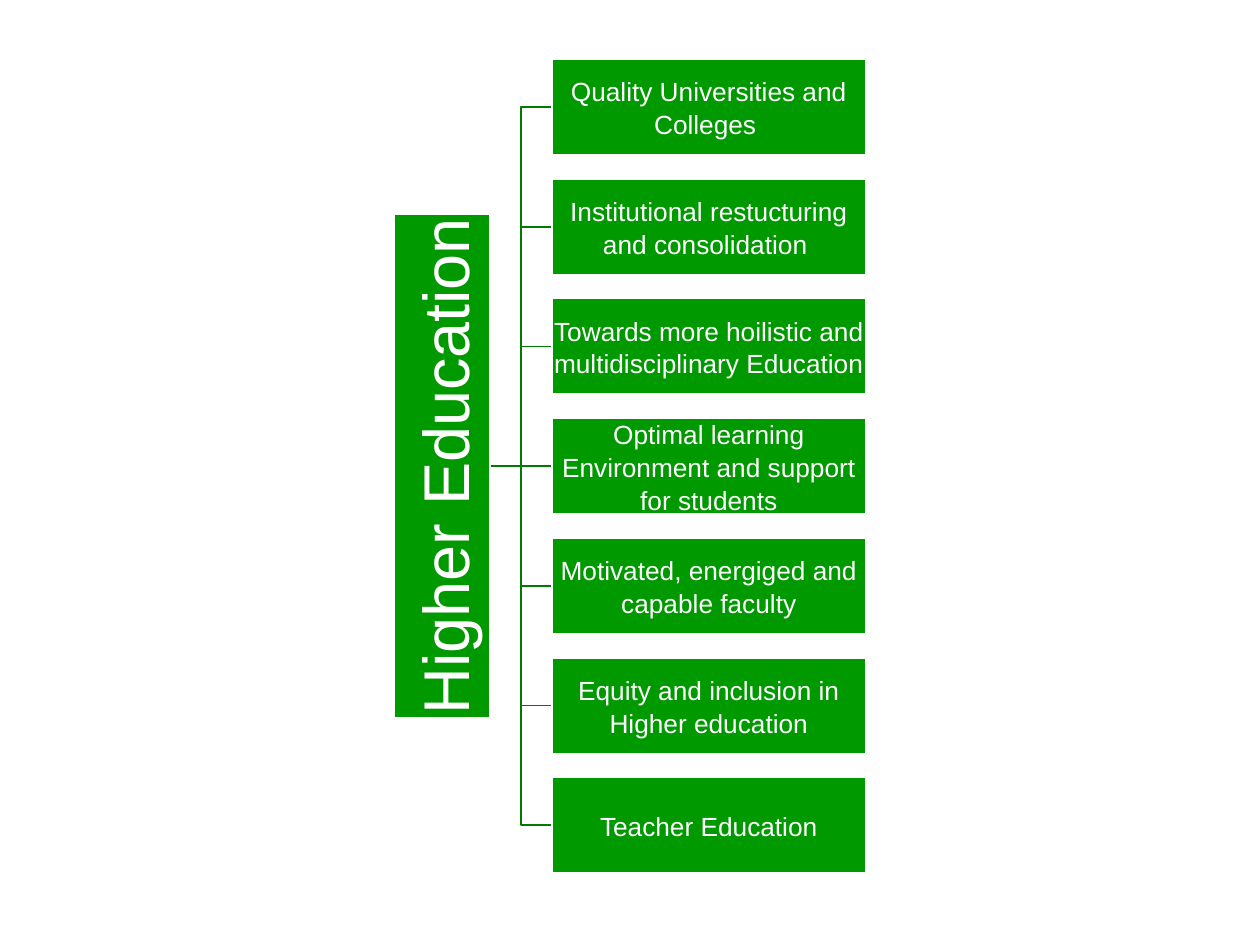
from dataclasses import dataclass

from lxml.etree import SubElement
from pptx import Presentation
from pptx.dml.color import RGBColor
from pptx.enum.shapes import MSO_CONNECTOR as Connector, MSO_SHAPE as Shape
from pptx.enum.text import MSO_ANCHOR as Anchor, PP_ALIGN as Align
from pptx.oxml.ns import qn
from pptx.util import Inches, Pt

ROOT = "Higher Education "
TOPICS = [
    "Quality Universities and Colleges ",
    "Institutional restucturing and consolidation ",
    "Towards more hoilistic and multidisciplinary Education",
    "Optimal learning Environment and support for students",
    "Motivated, energiged and capable faculty",
    "Equity and inclusion in Higher education",
    "Teacher Education",
]


@dataclass(frozen=True)
class Theme:
    fill: RGBColor = RGBColor(0x00, 0x99, 0x00)
    branch: RGBColor = RGBColor(0x00, 0x7B, 0x00)
    light: RGBColor = RGBColor(0xFF, 0xFF, 0xFF)
    font: str = "Arial"
    root_size: int = 37
    topic_size: int = 15
    line: int = 1


THEME = Theme()
WIDTH, HEIGHT = 10, 7.5
BAR = 0.76                       # thickness of every box
ROOT_LENGTH, TOPIC_WIDTH = 4, 2.49
ROOT_RIGHT, TOPIC_LEFT = 3.89, 4.38
TRUNK = (ROOT_RIGHT + TOPIC_LEFT) / 2
MIDDLE, PITCH = 3.7, 0.95
CENTRES = [MIDDLE + (row - len(TOPICS) // 2) * PITCH for row in range(len(TOPICS))]


def style_line(line, color):
    line.color.rgb = color
    line.width = Pt(THEME.line)


def add_box(page, text, center_x, center_y, width, *, size, inset, rotation=0):
    box = page.shapes.add_shape(
        Shape.RECTANGLE, Inches(center_x - width / 2), Inches(center_y - BAR / 2),
        Inches(width), Inches(BAR))
    box.rotation = rotation
    box.shadow.inherit = False
    box.fill.solid()
    box.fill.fore_color.rgb = THEME.fill
    style_line(box.line, THEME.light)
    frame = box.text_frame
    frame.word_wrap = True
    frame.vertical_anchor = Anchor.MIDDLE
    frame.margin_left = frame.margin_right = Inches(inset)
    frame.margin_top = frame.margin_bottom = Inches(inset)
    para = frame.paragraphs[0]
    para.alignment = Align.CENTER
    para.line_spacing = 1.04
    span = para.add_run()
    span.text = text
    span.font.name = THEME.font
    span.font.size = Pt(size)
    span.font.color.rgb = THEME.light
    return box


def add_bent_branch(page, center_y):
    points = [(TRUNK, MIDDLE), (TRUNK, center_y), (TOPIC_LEFT, center_y)]
    builder = page.shapes.build_freeform(Inches(ROOT_RIGHT), Inches(MIDDLE))
    builder.add_line_segments([(Inches(x), Inches(y)) for x, y in points], close=False)
    branch = builder.convert_to_shape()
    branch.shadow.inherit = False
    branch.fill.background()
    style_line(branch.line, THEME.branch)


def add_straight_branch(page):
    branch = page.shapes.add_connector(
        Connector.STRAIGHT, Inches(ROOT_RIGHT), Inches(MIDDLE),
        Inches(TOPIC_LEFT), Inches(MIDDLE))
    style_line(branch.line, THEME.branch)
    SubElement(branch._element.spPr, qn("a:effectLst"))
    return branch


def main():
    deck = Presentation()
    deck.slide_width, deck.slide_height = Inches(WIDTH), Inches(HEIGHT)
    page = deck.slides.add_slide(deck.slide_layouts[6])

    for center_y in reversed(CENTRES):
        if center_y != MIDDLE:
            add_bent_branch(page, center_y)
    straight = add_straight_branch(page)

    root = add_box(page, ROOT, ROOT_RIGHT - BAR / 2, MIDDLE, ROOT_LENGTH,
                   size=THEME.root_size, inset=0.03, rotation=270)
    topics = [add_box(page, text, TOPIC_LEFT + TOPIC_WIDTH / 2, center_y, TOPIC_WIDTH,
                      size=THEME.topic_size, inset=0.01)
              for text, center_y in zip(TOPICS, CENTRES)]

    # The root is turned by 270 degrees, so its bottom side faces right.
    straight.begin_connect(root, 2)
    straight.begin_x, straight.begin_y = Inches(ROOT_RIGHT), Inches(MIDDLE)
    straight.end_connect(topics[len(topics) // 2], 1)

    deck.save("out.pptx")


if __name__ == "__main__":
    main()
